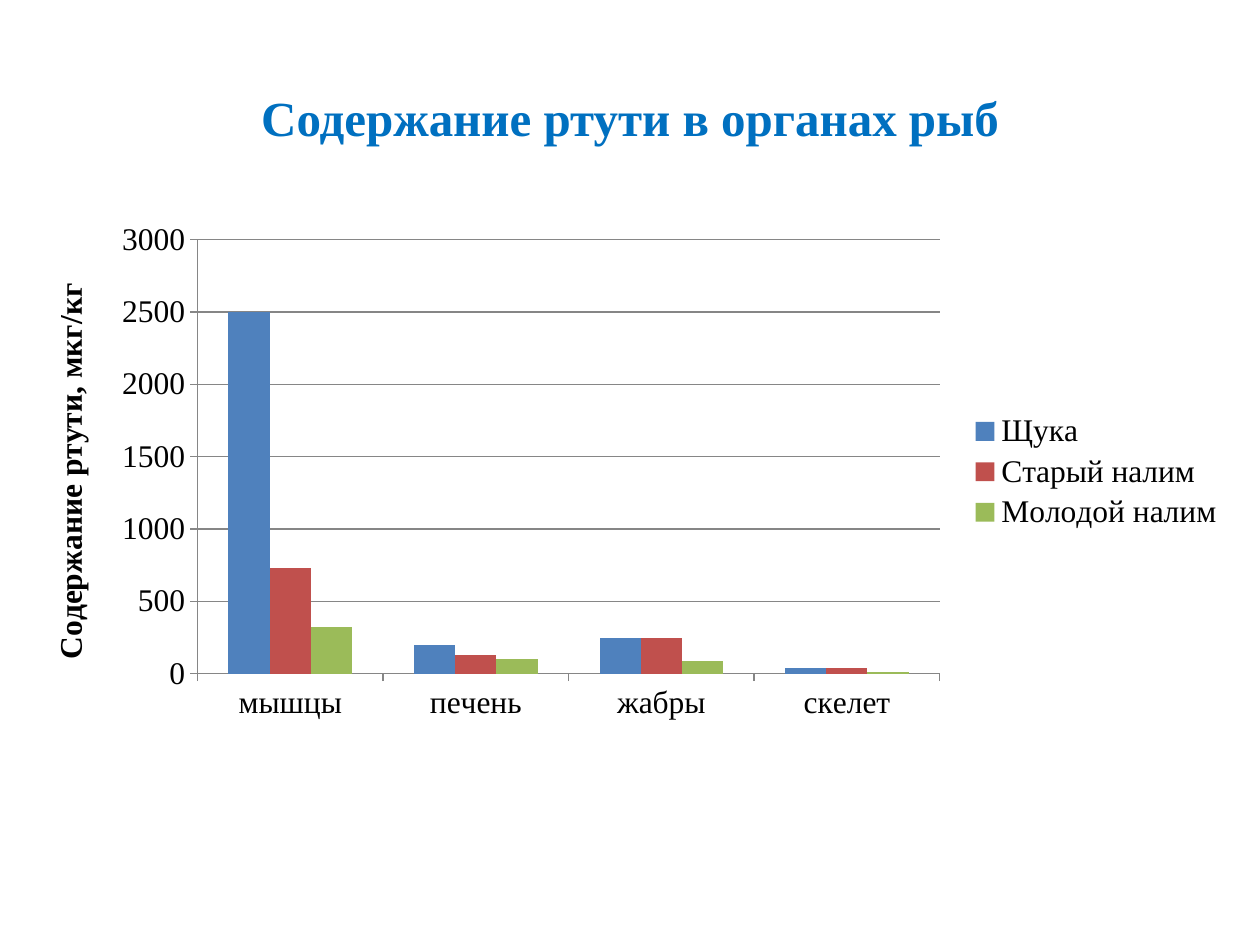
from dataclasses import dataclass

from lxml import etree
from pptx import Presentation
from pptx.chart.data import CategoryChartData
from pptx.dml.color import RGBColor
from pptx.enum import chart as ch, text
from pptx.util import Inches, Pt


@dataclass(frozen=True)
class Theme:
    font: str = "Times New Roman"
    title: str = "0070C0"
    ink: str = "000000"
    line: str = "868686"
    title_size: int = 28
    chart_size: int = 18


@dataclass(frozen=True)
class Fish:
    name: str
    mercury: tuple[float, ...]
    color: str


THEME = Theme()
ORGANS = ("мышцы", "печень", "жабры", "скелет")
FISHES = (
    Fish("Щука", (2500, 200, 250, 40), "4F81BD"),
    Fish("Старый налим", (730, 130, 250, 40), "C0504D"),
    Fish("Молодой налим", (320, 100, 90, 10), "9BBB59"),
)
# Inner plot area as fractions of the chart frame
PLOT_LAYOUT = {"x": 0.144, "y": 0.052, "w": 0.611, "h": 0.838}


def set_attrs(obj, values: dict) -> None:
    for name, value in values.items():
        setattr(obj, name, value)


def format_font(font, size: int, color: str, bold: bool = False) -> None:
    set_attrs(font, {"name": THEME.font, "size": Pt(size), "bold": bold})
    font.color.rgb = RGBColor.from_string(color)


def format_line(line) -> None:
    line.color.rgb = RGBColor.from_string(THEME.line)
    line.width = Pt(0.75)


def add_title(s, words: str) -> None:
    sp = s.shapes.title
    set_attrs(sp, {"left": Inches(0.5), "top": Inches(0.3),
                   "width": Inches(9), "height": Inches(1.25)})
    tf = sp.text_frame
    tf.vertical_anchor = text.MSO_ANCHOR.MIDDLE
    p = tf.paragraphs[0]
    p.alignment = text.PP_ALIGN.CENTER
    r = p.add_run()
    r.text = words
    format_font(r.font, THEME.title_size, THEME.title, bold=True)


def set_plot_layout(chart) -> None:
    area = chart.element.chart.plotArea
    ns = area.nsmap["c"]
    for old in area.findall(f"{{{ns}}}layout"):
        area.remove(old)
    layout = etree.Element(f"{{{ns}}}layout")
    manual = etree.SubElement(layout, f"{{{ns}}}manualLayout")
    values = {"layoutTarget": "inner", "xMode": "edge", "yMode": "edge", **PLOT_LAYOUT}
    for tag, value in values.items():
        etree.SubElement(manual, f"{{{ns}}}{tag}").set("val", str(value))
    area.insert(0, layout)


def add_mercury_chart(s) -> None:
    data = CategoryChartData()
    data.categories = ORGANS
    for fish in FISHES:
        data.add_series(fish.name, fish.mercury)
    chart = s.shapes.add_chart(
        ch.XL_CHART_TYPE.COLUMN_CLUSTERED, Inches(0.18), Inches(1.69),
        Inches(9.64), Inches(4.11), data).chart
    chart.has_title = False
    format_font(chart.font, THEME.chart_size, THEME.ink)

    # Columns
    plot = chart.plots[0]
    set_attrs(plot, {"gap_width": 150, "overlap": 0, "vary_by_categories": False})
    for series, fish in zip(plot.series, FISHES):
        series.format.fill.solid()
        series.format.fill.fore_color.rgb = RGBColor.from_string(fish.color)

    # Axes
    for axis in (chart.category_axis, chart.value_axis):
        set_attrs(axis, {"major_tick_mark": ch.XL_TICK_MARK.OUTSIDE,
                         "minor_tick_mark": ch.XL_TICK_MARK.NONE})
        format_line(axis.format.line)
        format_font(axis.tick_labels.font, THEME.chart_size, THEME.ink)
    axis = chart.value_axis
    set_attrs(axis, {"minimum_scale": 0, "maximum_scale": 3000, "major_unit": 500,
                     "has_major_gridlines": True})
    format_line(axis.major_gridlines.format.line)
    r = axis.axis_title.text_frame.paragraphs[0].add_run()
    r.text = "Содержание ртути, мкг/кг"
    format_font(r.font, THEME.chart_size, THEME.ink, bold=True)

    # Legend
    chart.has_legend = True
    set_attrs(chart.legend, {"position": ch.XL_LEGEND_POSITION.RIGHT,
                             "include_in_layout": False})
    format_font(chart.legend.font, THEME.chart_size, THEME.ink)
    set_plot_layout(chart)


def main() -> None:
    prs = Presentation()
    set_attrs(prs, {"slide_width": Inches(10), "slide_height": Inches(7.5)})
    s = prs.slides.add_slide(prs.slide_layouts[5])
    add_title(s, "Содержание ртути в органах рыб")
    add_mercury_chart(s)
    prs.save("out.pptx")


if __name__ == "__main__":
    main()
